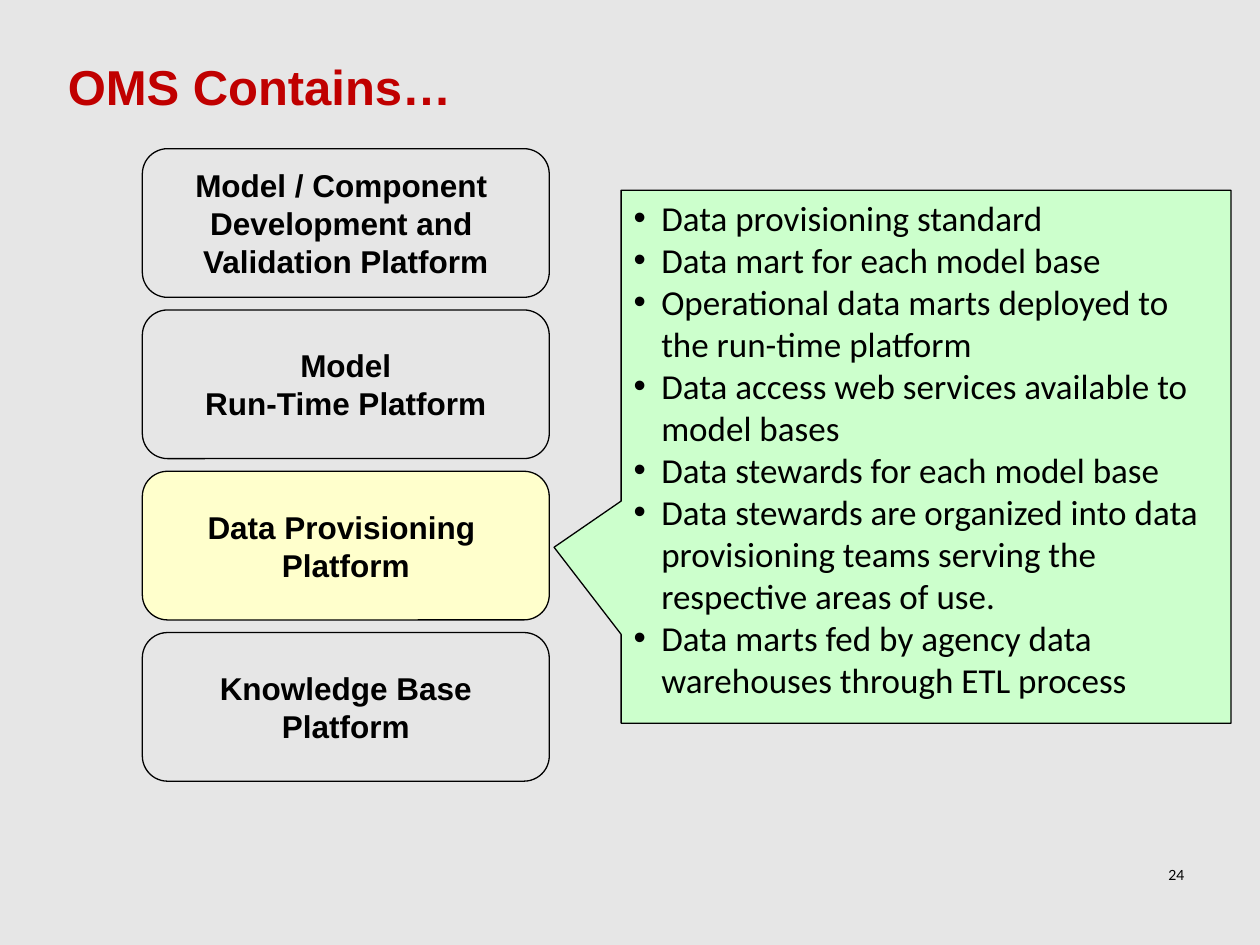
from dataclasses import dataclass

from lxml import etree
from pptx import Presentation
from pptx.dml.color import RGBColor
from pptx.enum.shapes import MSO_SHAPE
from pptx.enum.text import MSO_ANCHOR, PP_ALIGN
from pptx.oxml.ns import qn
from pptx.util import Inches, Pt


@dataclass(frozen=True)
class Theme:
    background: str = "E6E6E6"
    title: str = "C00000"
    ink: str = "000000"
    highlight: str = "FFFFCC"
    callout: str = "CCFFCC"
    heading_font: str = "Arial"
    body_font: str = "Calibri"
    number_font: str = "Lato"
    title_size: int = 28
    platform_size: int = 18
    body_size: int = 20
    number_size: int = 8
    line_width: float = 0.75


THEME = Theme()

PLATFORMS = [
    ["Model / Component ", "Development and ", "Validation Platform"],
    ["Model", "Run-Time Platform"],
    ["Data Provisioning ", "Platform"],
    ["Knowledge Base", "Platform"],
]
CURRENT_PLATFORM = 2
PLATFORM_TOP, PLATFORM_PITCH = 1.18, 1.28

PROVISIONING_POINTS = [
    "Data provisioning standard",
    "Data mart for each model base",
    "Operational data marts deployed to the run-time platform",
    "Data access web services available to model bases",
    "Data stewards for each model base",
    "Data stewards are organized into data provisioning teams serving the "
    "respective areas of use.",
    "Data marts fed by agency data warehouses through ETL process",
]


def fill_text(tf, lines, font, size, color=THEME.ink, bold=False,
              align=PP_ALIGN.LEFT):
    """Write one paragraph per line, all in the same style."""
    for i, line in enumerate(lines):
        p = tf.paragraphs[0] if i == 0 else tf.add_paragraph()
        p.text = line
        p.alignment = align
        p.font.name = font
        p.font.size = Pt(size)
        p.font.bold = bold
        p.font.color.rgb = RGBColor.from_string(color)


def add_label(slide, box, text, **style):
    tf = slide.shapes.add_textbox(*map(Inches, box)).text_frame
    tf.word_wrap = True
    fill_text(tf, [text], **style)


def add_outlined_shape(slide, kind, box, fill, adjustments):
    sp = slide.shapes.add_shape(kind, *map(Inches, box))
    for i, value in enumerate(adjustments):
        sp.adjustments[i] = value
    sp.shadow.inherit = False
    sp.fill.solid()
    sp.fill.fore_color.rgb = RGBColor.from_string(fill)
    sp.line.color.rgb = RGBColor.from_string(THEME.ink)
    sp.line.width = Pt(THEME.line_width)
    return sp


def add_platform(slide, top, lines, fill):
    sp = add_outlined_shape(slide, MSO_SHAPE.ROUNDED_RECTANGLE,
                            (1.13, top, 3.23, 1.18), fill, [0.17])
    tf = sp.text_frame
    tf.word_wrap = False
    tf.vertical_anchor = MSO_ANCHOR.MIDDLE
    fill_text(tf, lines, THEME.heading_font, THEME.platform_size, bold=True,
              align=PP_ALIGN.CENTER)


def add_bullet(p):
    pPr = p._p.get_or_add_pPr()
    pPr.set("marL", str(Inches(0.22)))
    pPr.set("indent", str(Inches(-0.24)))
    bullet_font = etree.Element(qn("a:buFont"), typeface="Arial")
    bullet = etree.Element(qn("a:buChar"), char="•")
    pPr.insert(0, bullet_font)
    bullet_font.addnext(bullet)


def add_callout(slide, points):
    sp = add_outlined_shape(slide, MSO_SHAPE.RECTANGULAR_CALLOUT,
                            (4.93, 1.51, 4.84, 4.23), THEME.callout,
                            [-0.61, 0.17])
    tf = sp.text_frame
    tf.word_wrap = True
    tf.vertical_anchor = MSO_ANCHOR.TOP
    fill_text(tf, points, THEME.body_font, THEME.body_size)
    for p in tf.paragraphs:
        add_bullet(p)


def main():
    prs = Presentation()
    prs.slide_width, prs.slide_height = Inches(10), Inches(7.5)
    slide = prs.slides.add_slide(prs.slide_layouts[6])
    background = slide.background.fill
    background.solid()
    background.fore_color.rgb = RGBColor.from_string(THEME.background)

    add_label(slide, (0.44, 0.4, 4.03, 0.57), "OMS Contains…",
              font=THEME.heading_font, size=THEME.title_size,
              color=THEME.title, bold=True)
    for i, lines in enumerate(PLATFORMS):
        fill = THEME.highlight if i == CURRENT_PLATFORM else THEME.background
        add_platform(slide, PLATFORM_TOP + i * PLATFORM_PITCH, lines, fill)
    add_callout(slide, PROVISIONING_POINTS)
    add_label(slide, (7.17, 6.83, 2.33, 0.52), "24", font=THEME.number_font,
              size=THEME.number_size, align=PP_ALIGN.RIGHT)

    prs.save("out.pptx")


if __name__ == "__main__":
    main()
